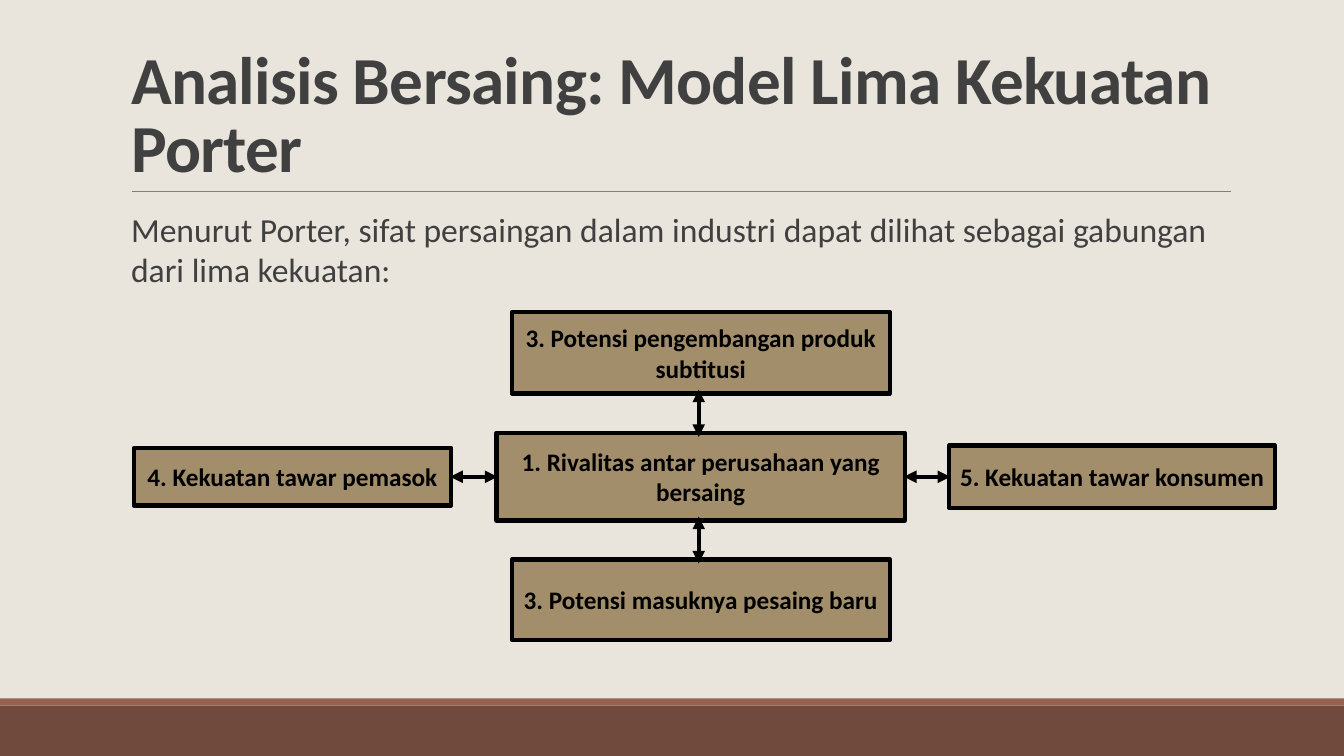
from lxml.etree import SubElement
from pptx import Presentation
from pptx.dml.color import RGBColor
from pptx.enum.shapes import MSO_CONNECTOR, MSO_SHAPE
from pptx.enum.text import MSO_ANCHOR, PP_ALIGN
from pptx.oxml.ns import qn
from pptx.util import Inches, Pt

HEADING = "Analisis Bersaing: Model Lima Kekuatan Porter"
INTRO = ("Menurut Porter, sifat persaingan dalam industri dapat dilihat "
         "sebagai gabungan dari lima kekuatan:")

COLUMNS = {"left": 2.9, "middle": 6.95, "right": 11.03}
ROWS = {"top": 3.5, "middle": 4.73, "bottom": 5.95}
FORCES = [
    ("3. Potensi pengembangan produk subtitusi", "middle", "top", 3.75, 0.81),
    ("1. Rivalitas antar perusahaan yang bersaing", "middle", "middle", 4.05, 0.87),
    ("3. Potensi masuknya pesaing baru", "middle", "bottom", 3.75, 0.8),
    ("4. Kekuatan tawar pemasok", "left", "middle", 3.15, 0.57),
    ("5. Kekuatan tawar konsumen", "right", "middle", 3.23, 0.62),
]

WIDTH, HEIGHT = 13.33, 7.5
OVERLAP_X, OVERLAP_Y = 0.01, 0.04
FONT = "Calibri"
PAPER = RGBColor(0xE9, 0xE5, 0xDC)
BROWN = RGBColor(0x70, 0x4A, 0x3D)
RUST = RGBColor(0x95, 0x62, 0x51)
GRAY = RGBColor(0x80, 0x80, 0x80)
INK = RGBColor(0x40, 0x40, 0x40)
TAN = RGBColor(0xA2, 0x8E, 0x6A)
BLACK = RGBColor(0, 0, 0)
BULLET = "D34817"
BANDS = [(7, 0.5, BROWN), (6.93, 0.07, RUST)]


def place(holder, left, top, width, height):
    holder.left, holder.top = Inches(left), Inches(top)
    holder.width, holder.height = Inches(width), Inches(height)


def write(paragraph, words, size, color, bold=False):
    run = paragraph.add_run()
    run.text = words
    run.font.name, run.font.size = FONT, Pt(size)
    run.font.bold, run.font.color.rgb = bold, color
    return run


def add_box(shapes, left, top, width, height, fill):
    box = shapes.add_shape(MSO_SHAPE.RECTANGLE, Inches(left), Inches(top),
                           Inches(width), Inches(height))
    box.shadow.inherit = False
    box.fill.solid()
    box.fill.fore_color.rgb = fill
    box.line.fill.background()
    return box


def add_line(shapes, start, end, color, weight, arrows=False):
    line = shapes.add_connector(MSO_CONNECTOR.STRAIGHT,
                                *(Inches(v) for v in start + end))
    line.line.color.rgb, line.line.width = color, Pt(weight)
    if arrows:
        for tip in ("a:headEnd", "a:tailEnd"):
            SubElement(line.line._get_or_add_ln(), qn(tip), type="triangle")
    SubElement(line._element.spPr, qn("a:effectLst"))


def add_force(shapes, words, column, row, width, height):
    box = add_box(shapes, COLUMNS[column] - width / 2, ROWS[row] - height / 2,
                  width, height, TAN)
    box.line.color.rgb, box.line.width = BLACK, Pt(3)
    frame = box.text_frame
    frame.word_wrap, frame.vertical_anchor = True, MSO_ANCHOR.MIDDLE
    frame.margin_left = frame.margin_right = Inches(0.05)
    frame.paragraphs[0].alignment = PP_ALIGN.CENTER
    write(frame.paragraphs[0], words, 18, BLACK, True)


def fill_heading(title):
    place(title, 1.2, 0.31, 11, 1.59)
    title.text_frame.word_wrap = True
    title.text_frame.vertical_anchor = MSO_ANCHOR.BOTTOM
    paragraph = title.text_frame.paragraphs[0]
    paragraph.alignment, paragraph.line_spacing = PP_ALIGN.LEFT, 0.85
    run = write(paragraph, HEADING, 48, INK, True)
    run.font._element.set("spc", "-50")


def fill_intro(body):
    place(body, 1.2, 2.02, 11, 4.4)
    body.text_frame.word_wrap = True
    body.text_frame.margin_left = body.text_frame.margin_right = 0
    paragraph = body.text_frame.paragraphs[0]
    paragraph.space_before, paragraph.space_after = Pt(0), Pt(2)
    properties = paragraph._p.get_or_add_pPr()
    properties.set("marL", str(Inches(0.1)))
    properties.set("indent", str(-Inches(0.1)))
    SubElement(SubElement(properties, qn("a:buClr")), qn("a:srgbClr"), val=BULLET)
    SubElement(properties, qn("a:buChar"), char=" ")
    write(paragraph, INTRO, 24, INK)


def add_diagram(slide):
    diagram = slide.shapes.add_group_shape().shapes
    for force in FORCES:
        add_force(diagram, *force)
    x, y = COLUMNS["middle"], ROWS["middle"]
    core_width, core_height = FORCES[1][3:]
    for _, column, row, width, height in FORCES:
        if row != "middle":
            side = 1 if row == "bottom" else -1
            outer = ROWS[row] - side * (height / 2 - OVERLAP_Y)
            inner = y + side * (core_height / 2 - OVERLAP_Y)
            add_line(diagram, (x - 0.02, outer), (x - 0.02, inner), BLACK, 3, True)
        elif column != "middle":
            side = 1 if column == "right" else -1
            outer = COLUMNS[column] - side * (width / 2 - OVERLAP_X)
            inner = x + side * (core_width / 2 - OVERLAP_X)
            add_line(diagram, (outer, y), (inner, y), BLACK, 3, True)


def main():
    deck = Presentation()
    deck.slide_width, deck.slide_height = Inches(WIDTH), Inches(HEIGHT)
    slide = deck.slides.add_slide(deck.slide_layouts[1])
    slide.background.fill.solid()
    slide.background.fill.fore_color.rgb = PAPER
    for top, height, color in BANDS:
        add_box(slide.shapes, 0, top, WIDTH, height, color)
    add_line(slide.shapes, (1.31, 1.9), (12.21, 1.9), GRAY, 0.5)
    fill_heading(slide.shapes.title)
    fill_intro(slide.placeholders[1])
    add_diagram(slide)
    deck.save("out.pptx")


if __name__ == "__main__":
    main()
